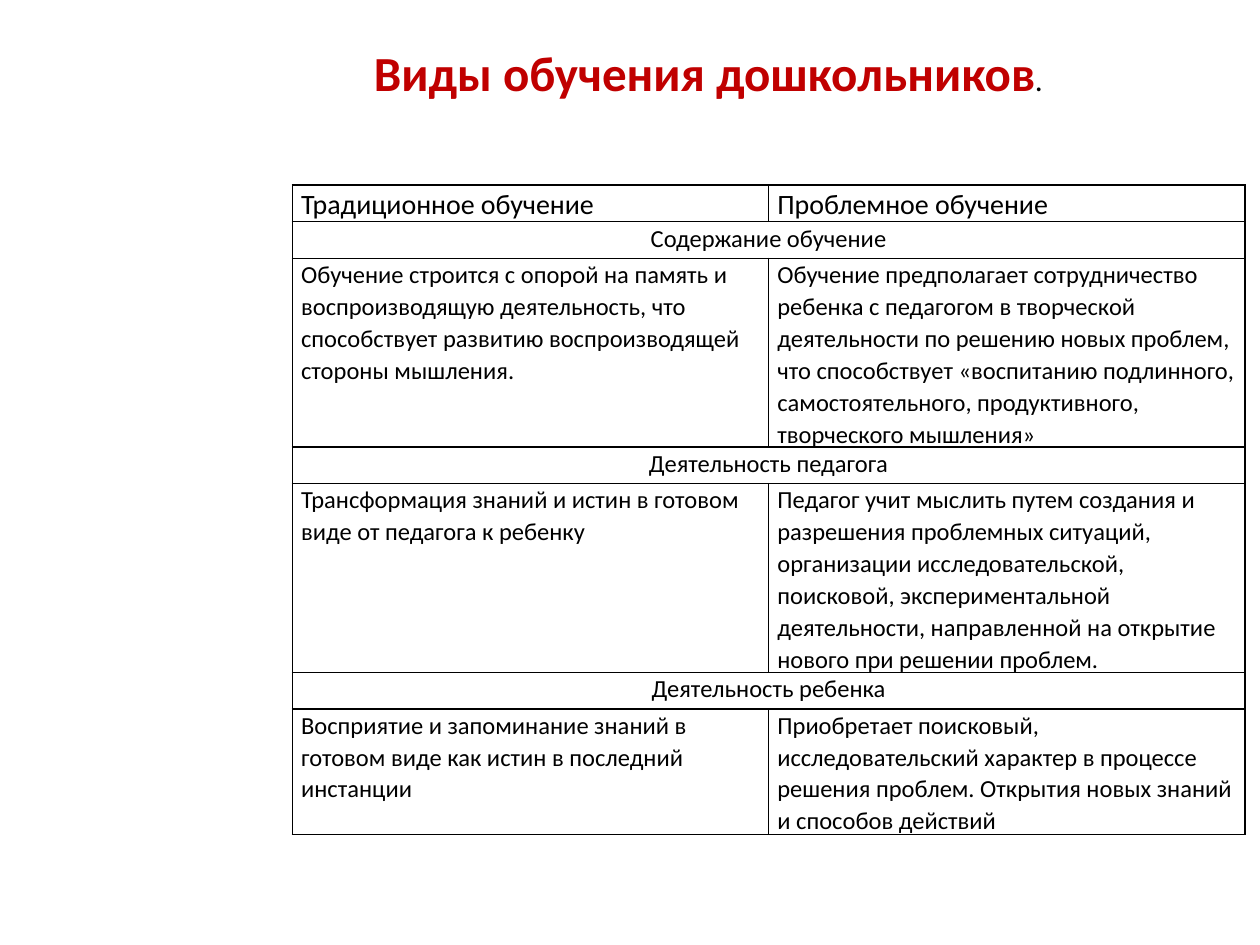
from lxml import etree
from pptx import Presentation
from pptx import util as u
from pptx.dml.color import RGBColor
from pptx.enum import text
from pptx.oxml.ns import qn

HUES = {"title": "C00000", "ink": "000000"}
HEADS = ("Традиционное обучение", "Проблемное обучение")
PARTS = [
    ("Содержание обучение", 1.15,
     "Обучение строится с опорой на память и воспроизводящую деятельность, "
     "что способствует развитию воспроизводящей стороны мышления.",
     "Обучение предполагает сотрудничество ребенка с педагогом в творческой "
     "деятельности по решению новых проблем, что способствует «воспитанию "
     "подлинного, самостоятельного, продуктивного, творческого мышления»"),
    ("Деятельность педагога", 1.28,
     "Трансформация знаний и истин в готовом виде от педагога к ребенку",
     "Педагог учит мыслить путем создания и разрешения проблемных ситуаций, "
     "организации исследовательской, поисковой, экспериментальной "
     "деятельности, направленной на открытие нового при решении проблем."),
    ("Деятельность ребенка", 0.87,
     "Восприятие и запоминание знаний в готовом виде как истин в последний "
     "инстанции",
     "Приобретает поисковый, исследовательский характер в процессе решения "
     "проблем. Открытия новых знаний и способов действий"),
]


class Deck:
    """Holds the text style and the slide being filled."""
    font = "Calibri"
    line = 0.29
    inset = {"margin_left": u.Inches(0.07), "margin_right": u.Inches(0.07),
             "margin_top": 0, "margin_bottom": 0}

    def __init__(self, slide):
        self.slide = slide

    def run(self, para, words, size, hue="ink", bold=False):
        run = para.add_run()
        run.text = words
        form = {"name": self.font, "size": u.Pt(size), "bold": bold}
        for key, val in form.items():
            setattr(run.font, key, val)
        run.font.color.rgb = RGBColor.from_string(HUES[hue])

    def title(self, left, top, wide, high, runs):
        box = self.slide.shapes.add_textbox(*map(u.Inches, (left, top, wide, high)))
        frame = box.text_frame
        frame.word_wrap = False
        frame.auto_size = text.MSO_AUTO_SIZE.SHAPE_TO_FIT_TEXT
        for words, form in runs:
            self.run(frame.paragraphs[0], words, **form)

    def border(self, cell):
        """Draw thin lines on all four sides, ahead of the cell's fill."""
        props = cell._tc.get_or_add_tcPr()
        for at, side in enumerate(("lnL", "lnR", "lnT", "lnB")):
            edge = etree.Element(qn(f"a:{side}"), w=str(u.Pt(1)))
            fill = etree.SubElement(edge, qn("a:solidFill"))
            etree.SubElement(fill, qn("a:srgbClr"), val=HUES["ink"])
            props.insert(at, edge)

    def fill(self, cell, words, size, align):
        for key, val in self.inset.items():
            setattr(cell, key, val)
        para = cell.text_frame.paragraphs[0]
        para.line_spacing = 1.07
        para.alignment = align
        self.run(para, words, size)

    def table(self, left, top, wide, rows):
        """Each row is (height, text size, words); one text spans the row."""
        high = sum(row[0] for row in rows)
        grid = self.slide.shapes.add_table(
            len(rows), 2, *map(u.Inches, (left, top, wide, high))).table
        grid.first_row = grid.horz_banding = False
        for i, (tall, size, words) in enumerate(rows):
            grid.rows[i].height = u.Inches(tall)
            pair = grid.cell(i, 0), grid.cell(i, 1)
            for cell in pair:
                cell.fill.background()
                self.border(cell)
            align = text.PP_ALIGN.LEFT
            if len(words) == 1:
                pair[0].merge(pair[1])
                align = text.PP_ALIGN.CENTER
            for cell, item in zip(pair, words):
                self.fill(cell, item, size, align)


def main():
    show = Presentation()
    show.slide_width, show.slide_height = u.Inches(10), u.Inches(7.5)
    deck = Deck(show.slides.add_slide(show.slide_layouts[6]))
    deck.title(2.87, 0.29, 5.56, 0.57, [
        ("Виды обучения дошкольников", {"size": 28, "hue": "title", "bold": True}),
        (".", {"size": 18})])
    rows = [(deck.line, 16, HEADS)]
    for name, tall, old, new in PARTS:
        rows += [(deck.line, 14, (name,)), (tall, 14, (old, new))]
    deck.table(2.32, 1.47, 7.56, rows)
    show.save("out.pptx")


if __name__ == "__main__":
    main()
